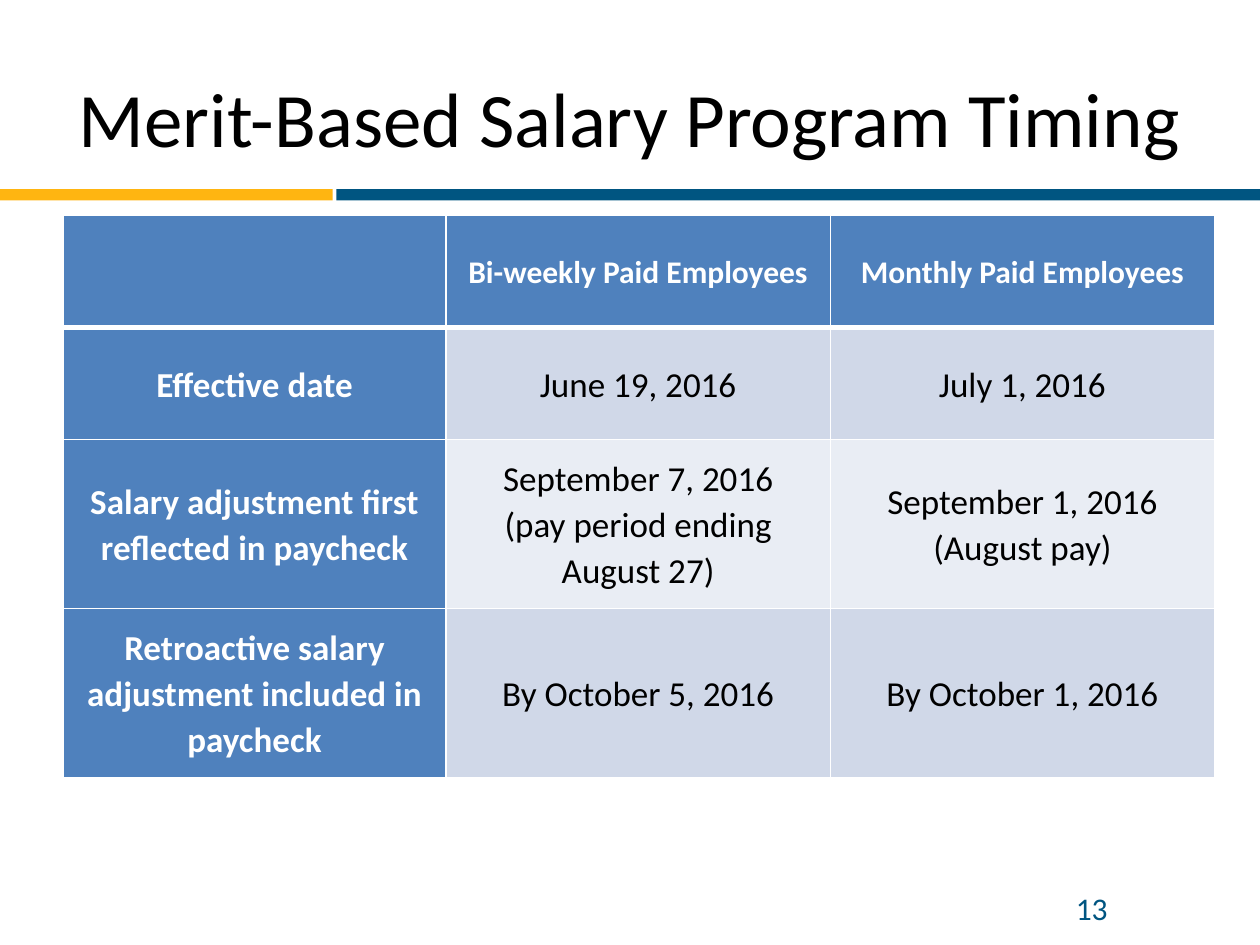
from dataclasses import dataclass

from lxml.etree import SubElement
from pptx import Presentation
from pptx.dml.color import RGBColor
from pptx.enum.shapes import MSO_SHAPE
from pptx.enum.text import MSO_ANCHOR, PP_ALIGN
from pptx.oxml.ns import qn
from pptx.util import Inches, Pt


@dataclass(frozen=True)
class Theme:
    """Colours, font and type sizes of the slide."""
    font: str = "Calibri"
    text: str = "000000"
    white: str = "FFFFFF"
    navy: str = "005581"
    gold: str = "FFB511"
    header: str = "4F81BD"
    bands: tuple = ("D0D8E8", "E9EDF4")
    title_size: int = 44
    head_size: int = 18
    body_size: int = 20
    number_size: int = 18


THEME = Theme()
COLUMNS = (3.04, 3.05, 3.05)
ROWS = (0.89, 0.89, 1.34, 1.34)
TIMING = (
    ("", "Bi-weekly Paid Employees", "Monthly Paid Employees"),
    ("Effective date", "June 19, 2016", "July 1, 2016"),
    ("Salary adjustment first reflected in paycheck",
     "September 7, 2016\n(pay period ending August 27)",
     "September 1, 2016\n(August pay)"),
    ("Retroactive salary adjustment included in paycheck",
     "By October 5, 2016", "By October 1, 2016"),
)


def write(tf, text, size, color, bold=False, spacing=None):
    """Fill a text frame with centred, formatted paragraphs."""
    tf.word_wrap = True
    tf.text = text
    for p in tf.paragraphs:
        p.alignment = PP_ALIGN.CENTER
        p.line_spacing = spacing
        p.font.size = Pt(size)
        for r in p.runs:
            r.font.name = THEME.font
            r.font.size = Pt(size)
            r.font.bold = bold
            r.font.color.rgb = RGBColor.from_string(color)


def add_text(slide, box, text, size, color, anchor=MSO_ANCHOR.TOP):
    """Add a text box."""
    tf = slide.shapes.add_textbox(*map(Inches, box)).text_frame
    tf.vertical_anchor = anchor
    write(tf, text, size, color)


def add_bar(slide, left, width, color):
    """Add one coloured bar of the rule below the title."""
    sp = slide.shapes.add_shape(MSO_SHAPE.RECTANGLE, Inches(left), Inches(1.5),
                                Inches(width), Inches(0.09))
    sp.shadow.inherit = False
    sp.fill.solid()
    sp.fill.fore_color.rgb = RGBColor.from_string(color)
    sp.line.fill.background()


def set_borders(cell, top, bottom):
    """Draw white cell borders with the given top and bottom widths."""
    tc_pr = cell._tc.get_or_add_tcPr()
    widths = {"a:lnL": 1, "a:lnR": 1, "a:lnT": top, "a:lnB": bottom}
    for i, (tag, width) in enumerate(widths.items()):
        ln = SubElement(tc_pr, qn(tag), w=str(Pt(width)))
        fill = SubElement(ln, qn("a:solidFill"))
        SubElement(fill, qn("a:srgbClr"), val=THEME.white)
        tc_pr.insert(i, ln)


def style_cell(cell, text, row, col):
    """Write and colour a cell according to its place in the table."""
    heading = row == 0 or col == 0
    cell.vertical_anchor = MSO_ANCHOR.MIDDLE
    cell.margin_left = cell.margin_right = Inches(0.08)
    cell.margin_top = cell.margin_bottom = Inches(0.1)
    write(cell.text_frame, text,
          THEME.head_size if row == 0 else THEME.body_size,
          THEME.white if heading else THEME.text, heading, 1.07)
    color = THEME.header if heading else THEME.bands[(row - 1) % 2]
    cell.fill.solid()
    cell.fill.fore_color.rgb = RGBColor.from_string(color)
    set_borders(cell, 3 if row == 1 else 1, 3 if row == 0 else 1)


def add_timing_table(slide):
    """Add the table of dates."""
    table = slide.shapes.add_table(
        len(ROWS), len(COLUMNS), Inches(0.5), Inches(1.71),
        Inches(sum(COLUMNS)), Inches(sum(ROWS))).table
    for column, width in zip(table.columns, COLUMNS):
        column.width = Inches(width)
    for i, (row, height) in enumerate(zip(table.rows, ROWS)):
        row.height = Inches(height)
        for j, text in enumerate(TIMING[i]):
            style_cell(table.cell(i, j), text, i, j)


def main():
    """Build and save the slide."""
    prs = Presentation()
    prs.slide_width, prs.slide_height = Inches(10), Inches(7.5)
    slide = prs.slides.add_slide(prs.slide_layouts[6])
    add_bar(slide, 2.67, 7.33, THEME.navy)
    add_bar(slide, 0, 2.64, THEME.gold)
    add_text(slide, (0.5, 0.3, 9, 1.25), "Merit-Based Salary Program Timing",
             THEME.title_size, THEME.text, MSO_ANCHOR.MIDDLE)
    add_timing_table(slide)
    add_text(slide, (7.5, 7.01, 2.33, 0.4), "13", THEME.number_size, THEME.navy)
    prs.save("out.pptx")


if __name__ == "__main__":
    main()
